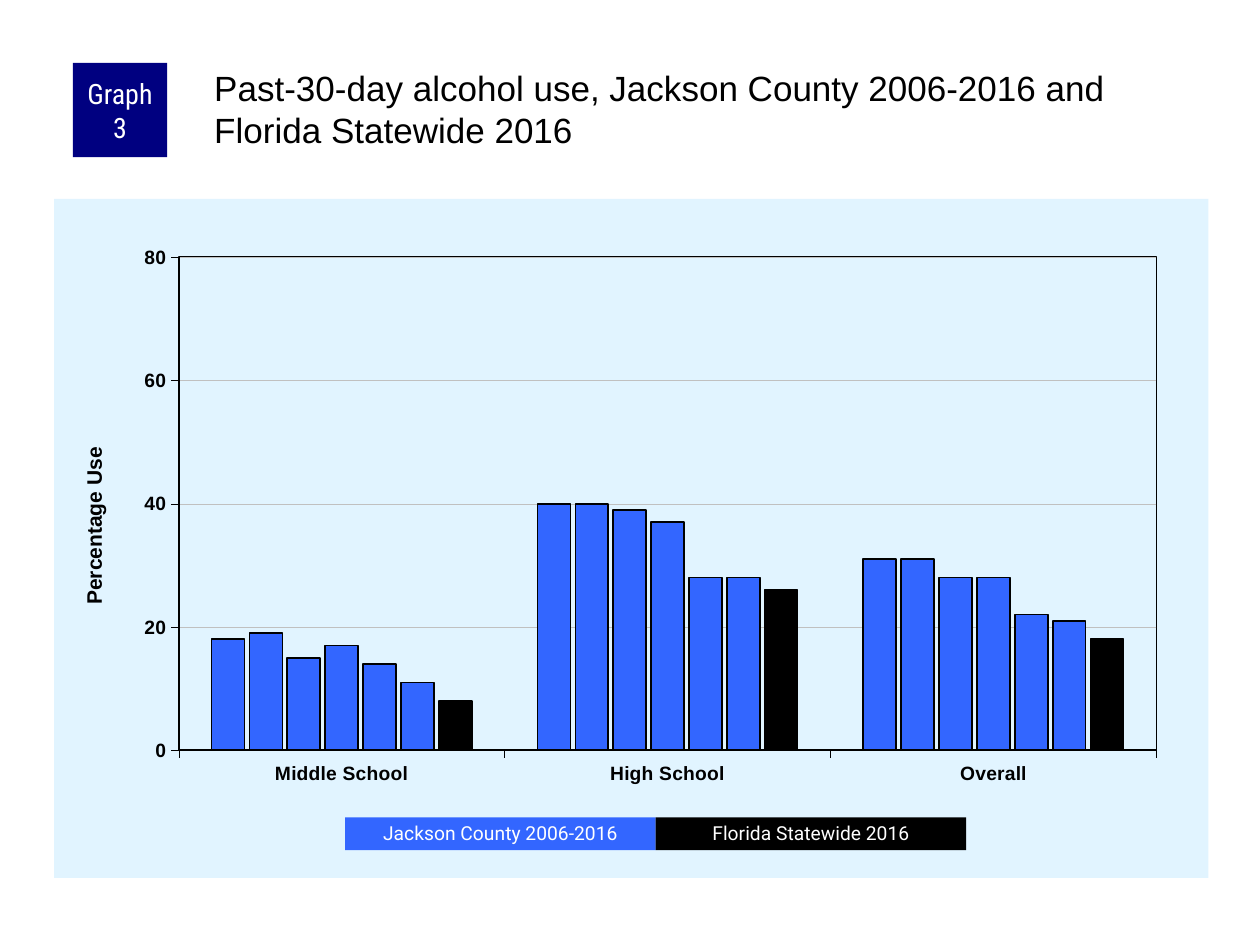
from dataclasses import dataclass

from lxml import etree
from pptx import Presentation
from pptx import util as u
from pptx.chart.data import CategoryChartData
from pptx.dml.color import RGBColor
from pptx.enum import chart as ch
from pptx.enum import shapes, text
from pptx.oxml import parse_xml
from pptx.oxml.ns import nsdecls, qn

BLACK, WHITE, NAVY = "000000", "FFFFFF", "000080"
COUNTY_BLUE, PANEL, GRID = "3366FF", "E1F4FF", "C0C0C0"


@dataclass
class Label:
    words: str
    left: float
    top: float
    width: float
    height: float
    fill: str
    font: str
    size: float
    inset: float
    line_spacing: float = 1.0


@dataclass
class Series:
    name: str
    values: tuple
    color: str = COUNTY_BLUE


def rgb(color: str) -> RGBColor:
    return RGBColor.from_string(color)


def style_font(font, name: str, size: float, color: str, bold: bool = False) -> None:
    font.name, font.size, font.bold = name, u.Pt(size), bold
    font.color.rgb = rgb(color)


def style_line(line, color: str, width: float) -> None:
    line.color.rgb = rgb(color)
    line.width = u.Pt(width)


def draw_label(slide, label: Label) -> None:
    box = slide.shapes.add_shape(
        shapes.MSO_SHAPE.RECTANGLE, u.Cm(label.left), u.Cm(label.top),
        u.Cm(label.width), u.Cm(label.height))
    box.shadow.inherit = False
    box.fill.solid()
    box.fill.fore_color.rgb = rgb(label.fill)
    box.line.fill.background()
    frame = box.text_frame
    frame.word_wrap = True
    frame.vertical_anchor = text.MSO_ANCHOR.MIDDLE
    frame.margin_left = frame.margin_right = u.Cm(label.inset)
    frame.margin_top = frame.margin_bottom = 0
    paragraph = frame.paragraphs[0]
    paragraph.text = label.words
    paragraph.alignment = text.PP_ALIGN.CENTER
    paragraph.line_spacing = label.line_spacing
    style_font(paragraph.font, label.font, label.size, WHITE)


def place(parent, index: int, **settings) -> None:
    """Give a chart part a manual layout."""
    for old in parent.findall(qn("c:layout")):
        parent.remove(old)
    layout = etree.Element(qn("c:layout"))
    manual = etree.SubElement(layout, qn("c:manualLayout"))
    for tag, value in settings.items():
        etree.SubElement(manual, qn(f"c:{tag}")).set("val", str(value))
    parent.insert(index, layout)


def area_format(content: str):
    return parse_xml(f'<c:spPr {nsdecls("c", "a")}>{content}</c:spPr>')


def solid(color: str) -> str:
    return f'<a:solidFill><a:srgbClr val="{color}"/></a:solidFill>'


def draw_chart(slide, categories: list[str], series: list[Series]) -> None:
    data = CategoryChartData()
    data.categories = categories
    for item in series:
        data.add_series(item.name, item.values)
    chart = slide.shapes.add_chart(
        ch.XL_CHART_TYPE.COLUMN_CLUSTERED, u.Cm(1.09), u.Cm(4.01),
        u.Cm(23.27), u.Cm(13.69), data).chart
    chart.has_legend = chart.has_title = False
    style_font(chart.font, "Arial", 8, BLACK)

    # Columns
    plot = chart.plots[0]
    plot.vary_by_categories = False
    plot.gap_width, plot.overlap = 200, -15
    for column, item in zip(plot.series, series):
        column.format.fill.solid()
        column.format.fill.fore_color.rgb = rgb(item.color)
        style_line(column.format.line, BLACK, 1)

    # Axes
    usage = chart.value_axis
    for axis in (chart.category_axis, usage):
        axis.major_tick_mark = ch.XL_TICK_MARK.OUTSIDE
        axis.minor_tick_mark = ch.XL_TICK_MARK.NONE
        style_font(axis.tick_labels.font, "Arial", 11, BLACK, bold=True)
        style_line(axis.format.line, BLACK, 0.25)
    usage.minimum_scale, usage.maximum_scale, usage.major_unit = 0, 80, 20
    usage.has_major_gridlines = True
    style_line(usage.major_gridlines.format.line, GRID, 0.25)
    heading = usage.axis_title.text_frame.paragraphs[0]
    heading.text = "Percentage Use"
    style_font(heading.font, "Arial", 12, BLACK, bold=True)
    place(usage.axis_title._element, 1, xMode="edge", yMode="edge", x=0.02, y=0.36)

    # Plot frame and panel
    space = chart.element
    plot_area = space.chart.plotArea
    place(plot_area, 0, layoutTarget="inner", xMode="edge", yMode="edge",
          x=0.108, y=0.086, w=0.847, h=0.726)
    plot_area.append(area_format(
        f'<a:noFill/><a:ln w="{u.Pt(1)}">{solid(BLACK)}</a:ln>'))
    space.chart.addnext(area_format(f"{solid(PANEL)}<a:ln><a:noFill/></a:ln>"))


def draw_title(slide, words: str) -> None:
    frame = slide.shapes.add_textbox(
        u.Cm(4.24), u.Cm(1.27), u.Cm(20.12), u.Cm(2.11)).text_frame
    frame.word_wrap = True
    frame.margin_left = frame.margin_top = u.Cm(0.08)
    frame.margin_right = frame.margin_bottom = 0
    paragraph = frame.paragraphs[0]
    paragraph.text = words
    style_font(paragraph.font, "Arial", 20, BLACK)


SCHOOLS = ["Middle School", "High School", "Overall"]
USE = [
    Series("Series 1", (18, 40, 31)),
    Series("Series 2", (19, 40, 31)),
    Series("Series 3", (15, 39, 28)),
    Series("Series 4", (17, 37, 28)),
    Series("Series 5", (14, 28, 22)),
    Series("Series 6", (11, 28, 21)),
    Series("Series 7", (8, 26, 18), BLACK),
]
BADGE = Label("Graph 3", 1.47, 1.27, 1.9, 1.9, NAVY, "Roboto Condensed", 16, 0.13)
KEY_LEFT, KEY_WIDTH = 6.96, 6.26
KEYS = [("Jackson County 2006-2016", COUNTY_BLUE), ("Florida Statewide 2016", BLACK)]


def main() -> None:
    deck = Presentation()
    deck.slide_width, deck.slide_height = u.Cm(25.4), u.Cm(19.05)
    slide = deck.slides.add_slide(deck.slide_layouts[6])

    draw_chart(slide, SCHOOLS, USE)

    # Heading
    draw_label(slide, BADGE)
    draw_title(slide, "Past-30-day alcohol use, Jackson County 2006-2016 and "
                      "Florida Statewide 2016")

    # Colour key
    for i, (words, color) in enumerate(KEYS):
        draw_label(slide, Label(words, KEY_LEFT + i * KEY_WIDTH, 16.48, KEY_WIDTH,
                                0.66, color, "Roboto", 11, 0.25, 0.9))

    deck.save("out.pptx")


if __name__ == "__main__":
    main()
